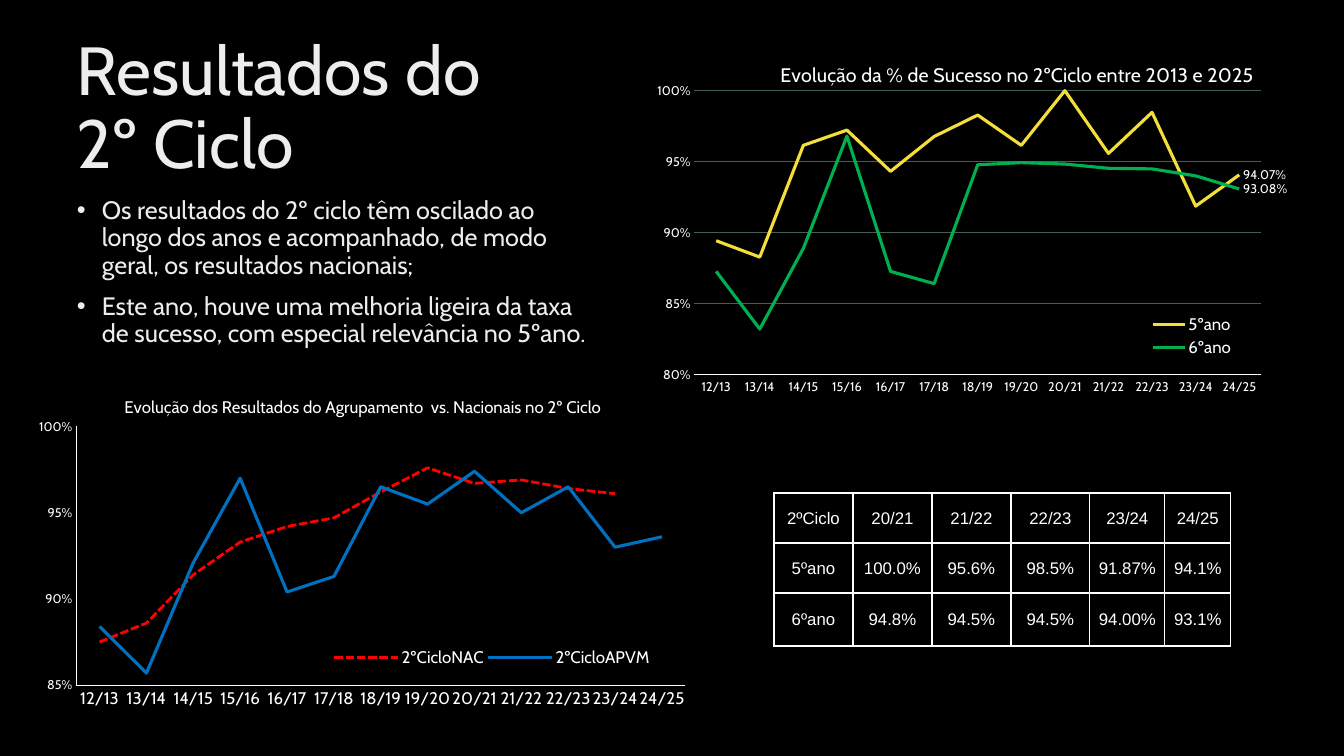
from lxml import etree
from pptx import Presentation
from pptx.chart.data import CategoryChartData
from pptx.dml.color import RGBColor
from pptx.enum.chart import XL_CHART_TYPE as ChartType, XL_LABEL_POSITION as LabelPosition
from pptx.enum.chart import XL_LEGEND_POSITION as LegendPosition, XL_TICK_MARK as TickMark
from pptx.enum.dml import MSO_LINE as LineDash
from pptx.enum.text import MSO_ANCHOR as Anchor, PP_ALIGN as Align
from pptx.oxml.ns import qn
from pptx.util import Pt

EMU_PER_INCH = 914400
PX_PER_INCH = 100.8
FONT = "Cabin"
WHITE = "FFFFFF"
YEARS = [f"{year}/{year + 1}" for year in range(12, 25)]

YEAR_5 = [0.8943, 0.8828, 0.9615, 0.9722, 0.9432, 0.9677, 0.9828,
          0.9615, 1, 0.9558, 0.9847, 0.9187, 0.9407]
YEAR_6 = [0.8727, 0.8321, 0.8889, 0.968, 0.8727, 0.8641, 0.9478,
          0.9493, 0.9483, 0.9453, 0.9449, 0.94, 0.9308]
NATIONAL = [0.875, 0.886, 0.914, 0.933, 0.942, 0.947, 0.962,
            0.976, 0.967, 0.969, 0.964, 0.961, None]
SCHOOLS = [0.884, 0.857, 0.921, 0.97, 0.904, 0.913, 0.965,
           0.955, 0.974, 0.95, 0.965, 0.93, 0.936]
RATES = [
    ["2ºCiclo", "20/21", "21/22", "22/23", "23/24", "24/25"],
    ["5ºano", "100.0%", "95.6%", "98.5%", "91.87%", "94.1%"],
    ["6ºano", "94.8%", "94.5%", "94.5%", "94.00%", "93.1%"],
]


def px(length):
    return round(length * EMU_PER_INCH / PX_PER_INCH)


def color(hex_code):
    return RGBColor.from_string(hex_code)


def add_child(parent, tag, **attributes):
    return etree.SubElement(parent, qn(tag), {k: str(v) for k, v in attributes.items()})


def style_font(font, size, hex_code=WHITE, name=FONT):
    font.size = Pt(size)
    font.name = name
    font.bold = False
    font.color.rgb = color(hex_code)


def fade_text(run, middle):
    """Fill a run with a grey-to-white gradient whose light grey stop is at middle percent."""
    run.font.fill.gradient()
    run.font.fill.gradient_angle = 280
    stops = run.font._element.find(qn("a:gradFill")).find(qn("a:gsLst"))
    for stop in list(stops):
        stops.remove(stop)
    for position, hex_code in ((0, "BFBFBF"), (middle, "EDEDED"), (100, WHITE)):
        add_child(add_child(stops, "a:gs", pos=position * 1000), "a:srgbClr", val=hex_code)


def write_text(paragraph, text, size=12, name=FONT, align=None, spacing=None,
               before=None, bullet=False, fade=None):
    if bullet:
        properties = paragraph._p.get_or_add_pPr()
        properties.set("marL", str(px(25)))
        properties.set("indent", str(px(-25)))
        add_child(properties, "a:buFont", typeface="Arial")
        add_child(properties, "a:buChar", char="•")
    paragraph.alignment = align
    paragraph.line_spacing = spacing
    if before is not None:
        paragraph.space_before = Pt(before)
    run = paragraph.add_run()
    run.text = text
    style_font(run.font, size, name=name)
    if fade is not None:
        fade_text(run, fade)


def add_text_box(slide, left, top, width, height, texts, anchor=Anchor.TOP, **text_format):
    shape = slide.shapes.add_textbox(px(left), px(top), px(width), px(height))
    frame = shape.text_frame
    frame.word_wrap = True
    frame.vertical_anchor = anchor
    for index, text in enumerate(texts):
        paragraph = frame.add_paragraph() if index else frame.paragraphs[0]
        write_text(paragraph, text, spacing=0.9, before=10 if index else 0, **text_format)


def place_part(part, index, x, y, width=None, height=None, inner=False):
    """Fix a chart part at fractions of the chart; index is the layout's slot in the part."""
    for old_layout in part.findall(qn("c:layout")):
        part.remove(old_layout)
    layout = etree.Element(qn("c:layout"))
    manual = add_child(layout, "c:manualLayout")
    if inner:
        add_child(manual, "c:layoutTarget", val="inner")
    add_child(manual, "c:xMode", val="edge")
    add_child(manual, "c:yMode", val="edge")
    for tag, value in (("c:x", x), ("c:y", y), ("c:w", width), ("c:h", height)):
        if value is not None:
            add_child(manual, tag, val=value)
    part.insert(index, layout)


def no_fill():
    properties = etree.Element(qn("c:spPr"))
    add_child(properties, "a:noFill")
    return properties


def style_axis(axis, size, line=WHITE):
    axis.major_tick_mark = axis.minor_tick_mark = TickMark.NONE
    style_font(axis.tick_labels.font, size)
    if line:
        axis.format.line.color.rgb = color(line)
        axis.format.line.width = Pt(0.75)
    else:
        axis.format.line.fill.background()


def add_line_chart(slide, left, top, width, height, title, series, minimum, title_size,
                   category_size, title_at, plot_at, legend_at, legend_side,
                   value_line=WHITE, grid=None, label_last=False):
    data = CategoryChartData(number_format="0.00%")
    data.categories = YEARS
    for name, values, *_ in series:
        data.add_series(name, values)
    chart = slide.shapes.add_chart(
        ChartType.LINE, px(left), px(top), px(width), px(height), data).chart
    style_font(chart.font, 10)
    chart_space = chart._chartSpace
    chart_space.find(qn("c:chart")).addnext(no_fill())

    chart.has_title = True
    write_text(chart.chart_title.text_frame.paragraphs[0], title, size=title_size)
    place_part(chart.chart_title._element, 1, *title_at)
    chart.has_legend = True
    chart.legend.position = legend_side
    chart.legend.include_in_layout = False
    style_font(chart.legend.font, 12)
    place_part(chart.legend._element, 1, *legend_at)

    style_axis(chart.category_axis, category_size)
    axis = chart.value_axis
    style_axis(axis, 9, value_line)
    axis.minimum_scale, axis.maximum_scale, axis.major_unit = minimum, 1, 0.05
    axis.tick_labels.number_format = "0%"
    axis.tick_labels.number_format_is_linked = False
    axis.has_major_gridlines = grid is not None
    if grid:
        axis.major_gridlines.format.line.color.rgb = color(grid)
        axis.major_gridlines.format.line.width = Pt(0.75)

    plot = chart.plots[0]
    plot.vary_by_categories = False
    for line_series, (_, _, hex_code, weight, dash) in zip(plot.series, series):
        line_series.smooth = False
        line = line_series.format.line
        line.color.rgb = color(hex_code)
        line.width = Pt(weight)
        line.dash_style = dash
        if label_last:
            label = line_series.points[len(YEARS) - 1].data_label
            style_font(label.font, 9)
            label.position = LabelPosition.RIGHT
    plot_area = chart_space.find(".//" + qn("c:plotArea"))
    place_part(plot_area, 0, *plot_at, inner=True)
    plot_area.append(no_fill())


def style_cell(cell, text):
    cell.fill.background()
    cell.vertical_anchor = Anchor.MIDDLE
    cell.margin_left = cell.margin_right = cell.margin_top = px(1)
    cell.margin_bottom = 0
    write_text(cell.text_frame.paragraphs[0], text, name="Arial", align=Align.CENTER)
    properties = cell._tc.get_or_add_tcPr()
    for index, side in enumerate(("a:lnL", "a:lnR", "a:lnT", "a:lnB")):
        border = etree.Element(qn(side), w=str(Pt(1)))
        add_child(add_child(border, "a:solidFill"), "a:srgbClr", val=WHITE)
        properties.insert(index, border)


def add_rate_table(slide, left, top, widths, heights, rows):
    table = slide.shapes.add_table(len(heights), len(widths), px(left), px(top),
                                   px(sum(widths)), px(sum(heights))).table
    table.first_row = table.horz_banding = False
    for column, width in zip(table.columns, widths):
        column.width = px(width)
    for row, height, texts in zip(table.rows, heights, rows):
        row.height = px(height)
        for cell, text in zip(row.cells, texts):
            style_cell(cell, text)


def main():
    presentation = Presentation()
    presentation.slide_width, presentation.slide_height = px(1344), px(756)
    slide = presentation.slides.add_slide(presentation.slide_layouts[6])
    slide.background.fill.solid()
    slide.background.fill.fore_color.rgb = color("000000")

    add_text_box(slide, 67, 51, 453, 118, ["Resultados do 2º Ciclo"],
                 anchor=Anchor.MIDDLE, size=48.6, fade=28)
    add_text_box(slide, 67, 193, 532, 480, [
        "Os resultados do 2º ciclo têm oscilado ao longo dos anos e acompanhado, "
        "de modo geral, os resultados nacionais;",
        "Este ano, houve uma melhoria ligeira da taxa de sucesso, "
        "com especial relevância no 5ºano.",
    ], size=18, bullet=True, fade=34)

    add_line_chart(
        slide, 645, 39, 659, 369, "Evolução da % de Sucesso no 2ºCiclo entre 2013 e 2025",
        [("5ºano", YEAR_5, "F4DE3A", 2.25, None), ("6ºano", YEAR_6, "00B050", 2.25, None)],
        minimum=0.8, title_size=14, category_size=9, title_at=(0.2, 0.05),
        plot_at=(0.075, 0.14, 0.86, 0.77), legend_at=(0.76, 0.74, 0.14, 0.13),
        legend_side=LegendPosition.RIGHT, value_line=None, grid="455F51", label_last=True)
    add_line_chart(
        slide, 27, 378, 674, 354,
        "Evolução dos Resultados do Agrupamento  vs. Nacionais no 2º Ciclo",
        [("2ºCicloNAC", NATIONAL, "FF0000", 2, LineDash.SQUARE_DOT),
         ("2ºCicloAPVM", SCHOOLS, "0070C0", 2.25, None)],
        minimum=0.85, title_size=12, category_size=12, title_at=(0.14, 0.04),
        plot_at=(0.073, 0.137, 0.904, 0.731), legend_at=(0.45, 0.75, 0.48, 0.08),
        legend_side=LegendPosition.BOTTOM)

    add_rate_table(slide, 774, 493, [79, 79, 79, 79, 75, 66], [50, 50, 53], RATES)
    presentation.save("out.pptx")


if __name__ == "__main__":
    main()
